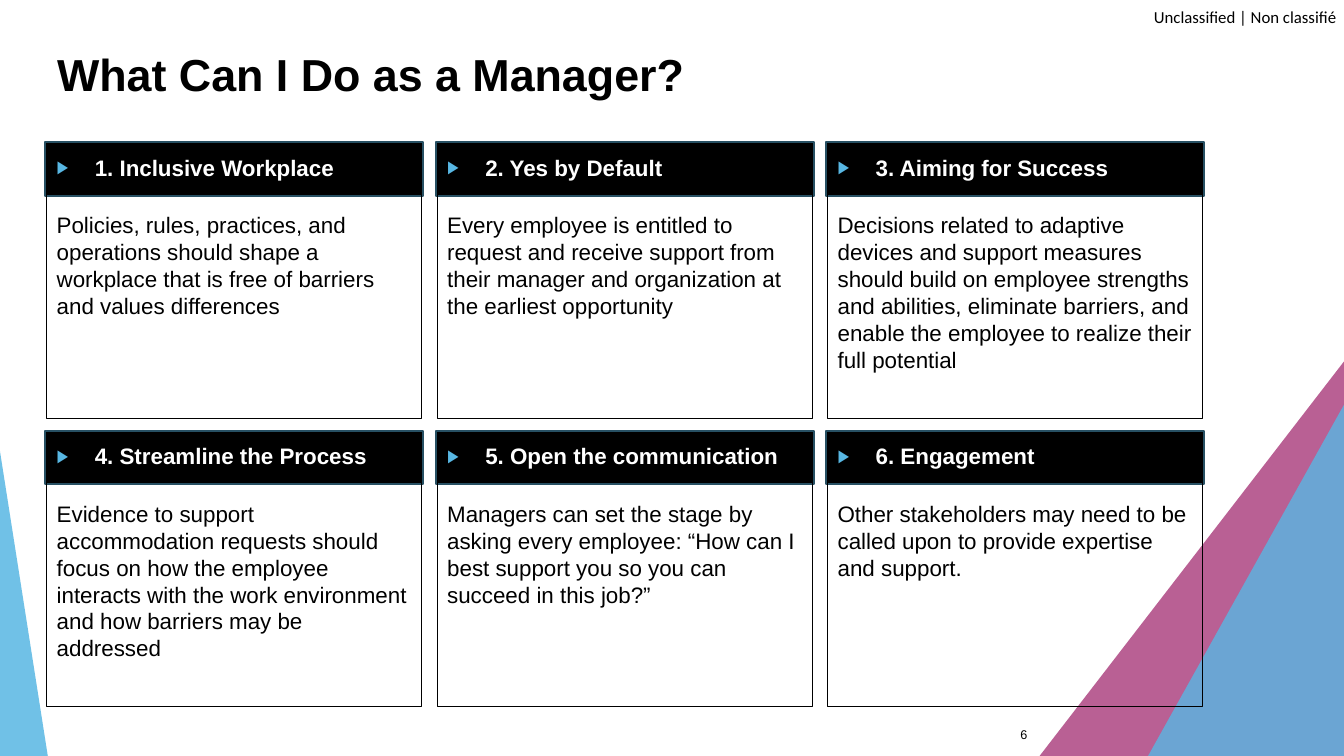
import dataclasses

import pptx
import pptx.dml.color
import pptx.enum.shapes
import pptx.enum.text
import pptx.oxml
import pptx.oxml.ns
import pptx.util
from lxml import etree

Cm = pptx.util.Cm
Pt = pptx.util.Pt
Shape = pptx.enum.shapes.MSO_SHAPE
Align = pptx.enum.text.PP_ALIGN
Anchor = pptx.enum.text.MSO_ANCHOR


@dataclasses.dataclass(frozen=True)
class Theme:
    black: str = "000000"
    white: str = "FFFFFF"
    edge: str = "275063"
    sky: str = "58B7E3"
    plum: str = "9E246B"
    font: str = "Arial"
    label: str = "Calibri"
    title: int = 32
    body: int = 16
    mark: int = 12
    page: int = 9


theme = Theme()

CARDS = [
    ("1. Inclusive Workplace",
     "Policies, rules, practices, and operations should shape a workplace "
     "that is free of barriers and values differences"),
    ("2. Yes by Default",
     "Every employee is entitled to request and receive support from their "
     "manager and organization at the earliest opportunity"),
    ("3. Aiming for Success",
     "Decisions related to adaptive devices and support measures should build "
     "on employee strengths and abilities, eliminate barriers, and enable the "
     "employee to realize their full potential"),
    ("4. Streamline the Process",
     "Evidence to support accommodation requests should focus on how the "
     "employee interacts with the work environment and how barriers may be "
     "addressed"),
    ("5. Open the communication",
     "Managers can set the stage by asking every employee: “How can I best "
     "support you so you can succeed in this job?”"),
    ("6. Engagement",
     "Other stakeholders may need to be called upon to provide expertise "
     "and support."),
]


def tint(color):
    return pptx.dml.color.RGBColor.from_string(color)


def add_shape(slide, kind, box, fill=None, line=None, width=0.75):
    shape = slide.shapes.add_shape(kind, *map(Cm, box))
    shape.shadow.inherit = False
    if fill:
        shape.fill.solid()
        shape.fill.fore_color.rgb = tint(fill)
    else:
        shape.fill.background()
    if line:
        shape.line.color.rgb = tint(line)
        shape.line.width = Pt(width)
    else:
        shape.line.fill.background()
    return shape


def set_frame(shape, inset=(0.25, 0.13, 0.25, 0.13), anchor=Anchor.TOP, wrap=True):
    frame = shape.text_frame
    frame.word_wrap = wrap
    frame.vertical_anchor = anchor
    (frame.margin_left, frame.margin_top,
     frame.margin_right, frame.margin_bottom) = map(Cm, inset)
    return frame


def write(para, text, size=theme.body, font=theme.font, color=theme.black,
          bold=False, align=Align.LEFT, before=0, after=0):
    para.alignment = align
    para.space_before, para.space_after = Pt(before), Pt(after)
    run = para.add_run()
    run.text = text
    run.font.size = Pt(size)
    run.font.name = font
    run.font.bold = bold
    run.font.color.rgb = tint(color)


def add_bullet(para, sign, color, scale, indent):
    props = para._p.get_or_add_pPr()
    props.set("marL", str(Cm(indent)))
    props.set("indent", str(-Cm(indent)))
    qn = pptx.oxml.ns.qn
    hue = etree.SubElement(props, qn("a:buClr"))
    etree.SubElement(hue, qn("a:srgbClr"), val=color)
    etree.SubElement(props, qn("a:buSzPct"), val=str(scale * 1000))
    etree.SubElement(props, qn("a:buFont"), typeface=theme.font)
    etree.SubElement(props, qn("a:buChar"), char=sign)


def add_wedge(slide, box, tip, color, alpha):
    shape = add_shape(slide, Shape.ISOSCELES_TRIANGLE, box, fill=color)
    shape.adjustments[0] = tip
    qn = pptx.oxml.ns.qn
    tone = shape._element.spPr.find(qn("a:solidFill")).find(qn("a:srgbClr"))
    etree.SubElement(tone, qn("a:alpha"), val=str(alpha * 1000))


def add_decor(slide, box):
    left, top, width, height = box
    base = top + height + 0.22
    right = left + width
    for span, rise, color, alpha in ((7.84, 10.16, theme.plum, 72),
                                     (5.06, 9.07, theme.sky, 80)):
        add_wedge(slide, (right - span, base - rise, span, rise), 1, color, alpha)
    add_wedge(slide, (left, base - 7.9, 1.24, 7.9), 0, theme.sky, 85)


def add_label(slide, box, text, inset=(0.25, 0.13, 0.25, 0.13),
              anchor=Anchor.MIDDLE, wrap=True, **look):
    label = slide.shapes.add_textbox(*map(Cm, box))
    frame = set_frame(label, inset, anchor, wrap)
    write(frame.paragraphs[0], text, **look)


def add_card(slide, box, head, body):
    left, top, width, height = box
    add_shape(slide, Shape.RECTANGLE, (left - 0.04, top - 0.04, width + 0.08, 1.34),
              fill=theme.black, line=theme.edge, width=1.5)
    card = add_shape(slide, Shape.RECTANGLE, box, line=theme.black)
    frame = set_frame(card, (0.25, 0.25, 0.25, 0.13))
    first = frame.paragraphs[0]
    write(first, head, color=theme.white, bold=True, before=12, after=12)
    add_bullet(first, "▶", theme.sky, 80, 0.96)
    write(frame.add_paragraph(), body, before=10)


def add_grid(slide, box, cards, cols=3, gap=(0.39, 0.36)):
    left, top, width, height = box
    rows = len(cards) // cols
    wide = (width - gap[0] * (cols - 1)) / cols
    high = (height - gap[1] * (rows - 1)) / rows
    for index, (head, body) in enumerate(cards):
        row, col = divmod(index, cols)
        spot = (left + col * (wide + gap[0]), top + row * (high + gap[1]), wide, high)
        add_card(slide, spot, head, body)


def main():
    deck = pptx.Presentation()
    deck.slide_width, deck.slide_height = Cm(33.87), Cm(19.05)
    slide = deck.slides.add_slide(deck.slide_layouts[6])
    add_decor(slide, (0, 0, 33.87, 19.05))
    add_label(slide, (29.08, 0.18, 4.72, 0.51), "Unclassified | Non classifié",
              inset=(0, 0, 0, 0), anchor=Anchor.TOP, wrap=False,
              size=theme.mark, font=theme.label)
    add_label(slide, (1.19, 0.64, 29.31, 2.41), "What Can I Do as a Manager?",
              size=theme.title, bold=True)
    add_grid(slide, (1.18, 3.63, 29.13, 14.18), CARDS)
    add_label(slide, (24.23, 18.01, 1.91, 1.02), "6",
              size=theme.page, align=Align.RIGHT, after=6)
    deck.save("out.pptx")


if __name__ == "__main__":
    main()
